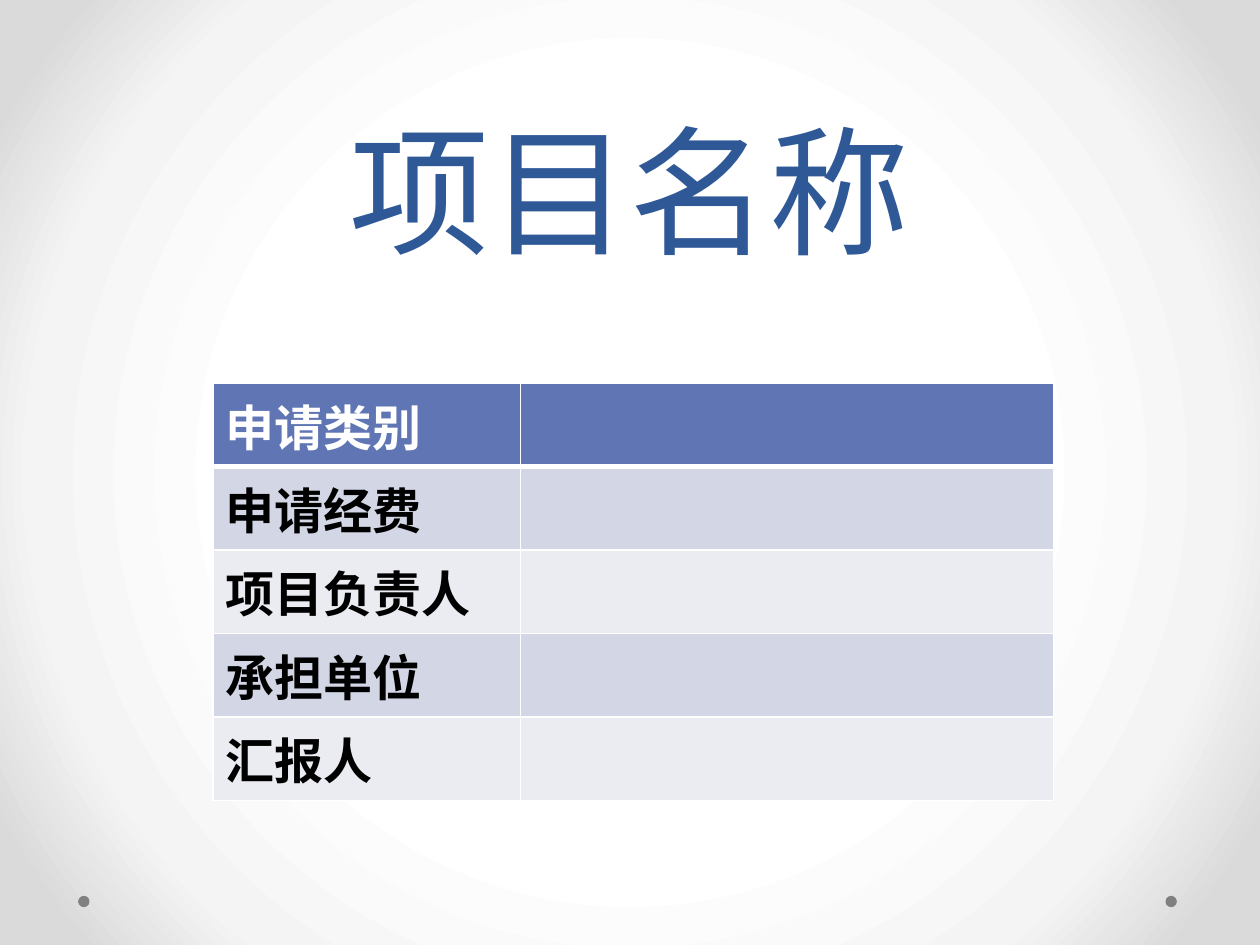
from lxml.etree import SubElement
from pptx import Presentation
from pptx.dml.color import RGBColor
from pptx.enum.shapes import MSO_SHAPE
from pptx.enum.text import MSO_ANCHOR, PP_ALIGN
from pptx.oxml import parse_xml
from pptx.oxml.ns import nsdecls, qn
from pptx.util import Inches, Pt

FONT = "Vollkorn"
WHITE = RGBColor(0xFF, 0xFF, 0xFF)
BLACK = RGBColor(0x00, 0x00, 0x00)
GRAY = RGBColor(0x80, 0x80, 0x80)
TITLE_BLUE = RGBColor(0x2F, 0x58, 0x97)
HEADER_BLUE = RGBColor(0x60, 0x76, 0xB4)
BAND_DARK = RGBColor(0xD2, 0xD6, 0xE5)
BAND_LIGHT = RGBColor(0xEA, 0xEC, 0xF2)
GRADIENT_STOPS = [(50, WHITE), (76, RGBColor(0xF4, 0xF4, 0xF4)), (92, RGBColor(0xDA, 0xDA, 0xDA))]
ROW_LABELS = ["申请类别", "申请经费", "项目负责人", "承担单位", "汇报人"]


def style_text(paragraph, size, color, alignment, bold=False):
    paragraph.alignment = alignment
    for run in paragraph.runs:
        run.font.name = FONT
        run.font.size = Pt(size)
        run.font.bold = bold
        run.font.color.rgb = color


def add_border(cell, side, width):
    line = SubElement(cell._tc.get_or_add_tcPr(), qn(f"a:ln{side}"), w=str(Pt(width)))
    fill = SubElement(line, qn("a:solidFill"))
    SubElement(fill, qn("a:srgbClr"), val=str(WHITE))


presentation = Presentation()
presentation.slide_width = Inches(10)
presentation.slide_height = Inches(7.5)
slide = presentation.slides.add_slide(presentation.slide_layouts[5])

# Radial background
stops = "".join(
    f'<a:gs pos="{position * 1000}"><a:srgbClr val="{color}"/></a:gs>'
    for position, color in GRADIENT_STOPS
)
background = parse_xml(
    f'<p:bg {nsdecls("p", "a")}><p:bgPr><a:gradFill rotWithShape="1">'
    f'<a:gsLst>{stops}</a:gsLst><a:path path="circle">'
    '<a:fillToRect l="50000" t="50000" r="50000" b="50000"/></a:path>'
    '</a:gradFill><a:effectLst/></p:bgPr></p:bg>'
)
slide.element.cSld.insert(0, background)

# Corner dots
for left in (9.25, 0.62):
    dot = slide.shapes.add_shape(
        MSO_SHAPE.OVAL, Inches(left), Inches(7.11), Inches(0.09), Inches(0.09)
    )
    dot.shadow.inherit = False
    dot.fill.solid()
    dot.fill.fore_color.rgb = GRAY
    dot.line.fill.background()

# Title
title = slide.shapes.title
title.left, title.top = Inches(0.75), Inches(0.44)
title.width, title.height = Inches(8.5), Inches(1.77)
title.text_frame.text = "项目名称"
title.text_frame.vertical_anchor = MSO_ANCHOR.BOTTOM
style_text(title.text_frame.paragraphs[0], 80, TITLE_BLUE, PP_ALIGN.CENTER)

# Application table
row_height = Inches(0.66)
table = slide.shapes.add_table(
    len(ROW_LABELS), 2, Inches(1.69), Inches(3.04), Inches(6.67), row_height * len(ROW_LABELS)
).table
table.columns[0].width = Inches(2.44)
table.columns[1].width = Inches(4.23)

for index, label in enumerate(ROW_LABELS):
    is_header = index == 0
    band = HEADER_BLUE if is_header else BAND_DARK if index % 2 else BAND_LIGHT
    table.rows[index].height = row_height
    for cell in table.rows[index].cells:
        for side in "LRTB":
            thick = (is_header and side == "B") or (index == 1 and side == "T")
            add_border(cell, side, 3 if thick else 1)
        cell.fill.solid()
        cell.fill.fore_color.rgb = band
    label_cell = table.cell(index, 0)
    label_cell.text_frame.text = label
    style_text(
        label_cell.text_frame.paragraphs[0], 28, WHITE if is_header else BLACK,
        PP_ALIGN.JUSTIFY, bold=True,
    )

presentation.save("out.pptx")
